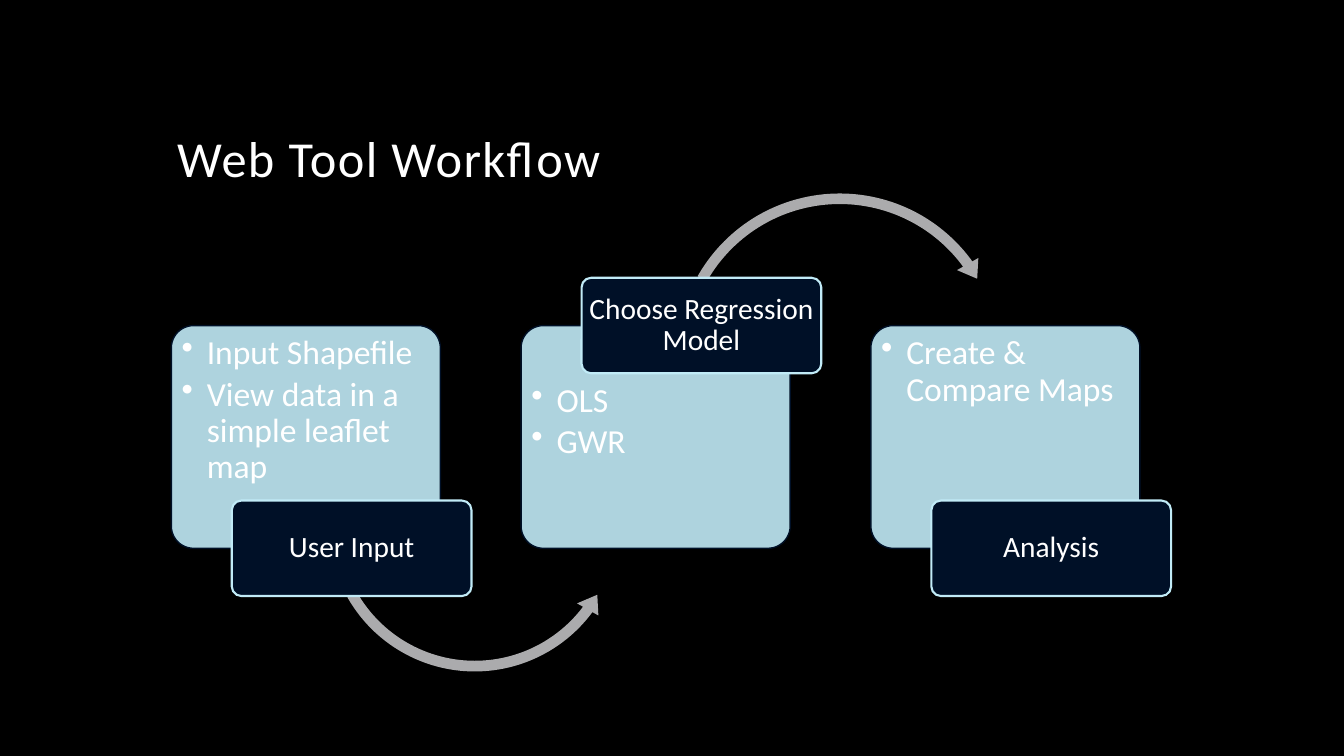
"""Build the Web Tool Workflow slide with three linked step cards."""
from lxml import etree
from pptx import Presentation
from pptx.dml.color import RGBColor
from pptx.enum.shapes import MSO_SHAPE as SHAPE
from pptx.enum.text import MSO_ANCHOR as ANCHOR, PP_ALIGN as ALIGN
from pptx.oxml.ns import qn
from pptx.util import Pt

TITLE = "Web Tool Workflow"
STEPS = [
    ("User Input", ["Input Shapefile", "View data in a simple leaflet map"], "below"),
    ("Choose Regression Model", ["OLS", "GWR"], "above"),
    ("Analysis", ["Create & Compare Maps"], "below"),
]
ARROWS = [
    (SHAPE.LEFT_CIRCULAR_ARROW, 229.7, 265.7, 218.9,
     (0.035, 4.277, 22.032, 90.245, 0.04)),
    (SHAPE.CIRCULAR_ARROW, 478.1, 133.2, 243.4,
     (0.031, 3.813, 194.431, 125.755, 0.036)),
]
FONT = "Calibri"
BLACK, WHITE, NAVY, ICE, GRAY = "000000", "FFFFFF", "001027", "C1EBF7", "ABABAD"
CARD_LEFT, CARD_TOP, CARD_PITCH = 122.4, 232.56, 249.84
CARD_WIDTH, CARD_HEIGHT = 192.2, 159.1
LABEL_SHIFT, LABEL_WIDTH, LABEL_HEIGHT = 43.2, 171.2, 68.2
BODY_INSET, BODY_HEIGHT = 3.7, 117.4
BULLET_INDENT = 18


def color(hex_code):
    return RGBColor.from_string(hex_code)


def add_panel(page, kind, bounds, adjustments, fill, line=None, line_width=1):
    panel = page.shapes.add_shape(kind, *map(Pt, bounds))
    panel.shadow.inherit = False
    for index, value in enumerate(adjustments):
        panel.adjustments[index] = value
    panel.fill.solid()
    panel.fill.fore_color.rgb = color(fill)
    if line:
        panel.line.color.rgb = color(line)
        panel.line.width = Pt(line_width)
    else:
        panel.line.fill.background()
    return panel


def set_frame(frame, anchor, across, down):
    frame.word_wrap = True
    frame.vertical_anchor = anchor
    frame.margin_left = frame.margin_right = Pt(across)
    frame.margin_top = frame.margin_bottom = Pt(down)


def write(para, text, size, align=ALIGN.LEFT):
    para.alignment = align
    para.line_spacing = 0.9
    span = para.add_run()
    span.text = text
    span.font.name = FONT
    span.font.size = Pt(size)
    span.font.color.rgb = color(WHITE)
    return span


def add_bullet(para):
    properties = para._p.get_or_add_pPr()
    properties.set("marL", str(Pt(BULLET_INDENT)))
    properties.set("indent", str(-Pt(BULLET_INDENT)))
    etree.SubElement(properties, qn("a:buChar")).set("char", "•")


def add_title(page):
    box = page.shapes.add_textbox(Pt(119.5), Pt(30.2), Pt(720), Pt(108))
    set_frame(box.text_frame, ANCHOR.BOTTOM, 7.2, 3.6)
    span = write(box.text_frame.paragraphs[0], TITLE, 36)
    span._r.get_or_add_rPr().set("spc", "100")


def add_card(page, left, items, side):
    card = add_panel(page, SHAPE.ROUNDED_RECTANGLE,
                     (left, CARD_TOP, CARD_WIDTH, CARD_HEIGHT), [0.1], ICE, NAVY)
    tint = card._element.spPr.find(qn("a:solidFill"))[0]
    etree.SubElement(tint, qn("a:alpha")).set("val", "90000")
    drop = LABEL_HEIGHT / 2 if side == "above" else 0
    body = page.shapes.add_textbox(
        Pt(left + BODY_INSET), Pt(CARD_TOP + BODY_INSET + drop),
        Pt(CARD_WIDTH - 2 * BODY_INSET), Pt(BODY_HEIGHT))
    frame = body.text_frame
    set_frame(frame, ANCHOR.TOP, 3.6, 3.6)
    for index, item in enumerate(items):
        para = frame.add_paragraph() if index else frame.paragraphs[0]
        add_bullet(para)
        para.space_after = Pt(3.6)
        write(para, item, 24)


def add_label(page, left, text, side):
    edge = CARD_TOP if side == "above" else CARD_TOP + CARD_HEIGHT
    bounds = (left + LABEL_SHIFT, edge - LABEL_HEIGHT / 2, LABEL_WIDTH, LABEL_HEIGHT)
    label = add_panel(page, SHAPE.ROUNDED_RECTANGLE, bounds, [0.1], NAVY, ICE, 1.5)
    set_frame(label.text_frame, ANCHOR.MIDDLE, 2.5, 2)
    write(label.text_frame.paragraphs[0], text, 21, ALIGN.CENTER)


def main():
    deck = Presentation()
    deck.slide_width, deck.slide_height = Pt(960), Pt(540)
    page = deck.slides.add_slide(deck.slide_layouts[6])
    page.background.fill.solid()
    page.background.fill.fore_color.rgb = color(BLACK)
    add_title(page)
    for index, (name, items, side) in enumerate(STEPS):
        left = CARD_LEFT + index * CARD_PITCH
        add_card(page, left, items, side)
        if index < len(ARROWS):
            kind, arrow_left, arrow_top, size, adjustments = ARROWS[index]
            add_panel(page, kind, (arrow_left, arrow_top, size, size), adjustments, GRAY)
        add_label(page, left, name, side)
    deck.save("out.pptx")


if __name__ == "__main__":
    main()
